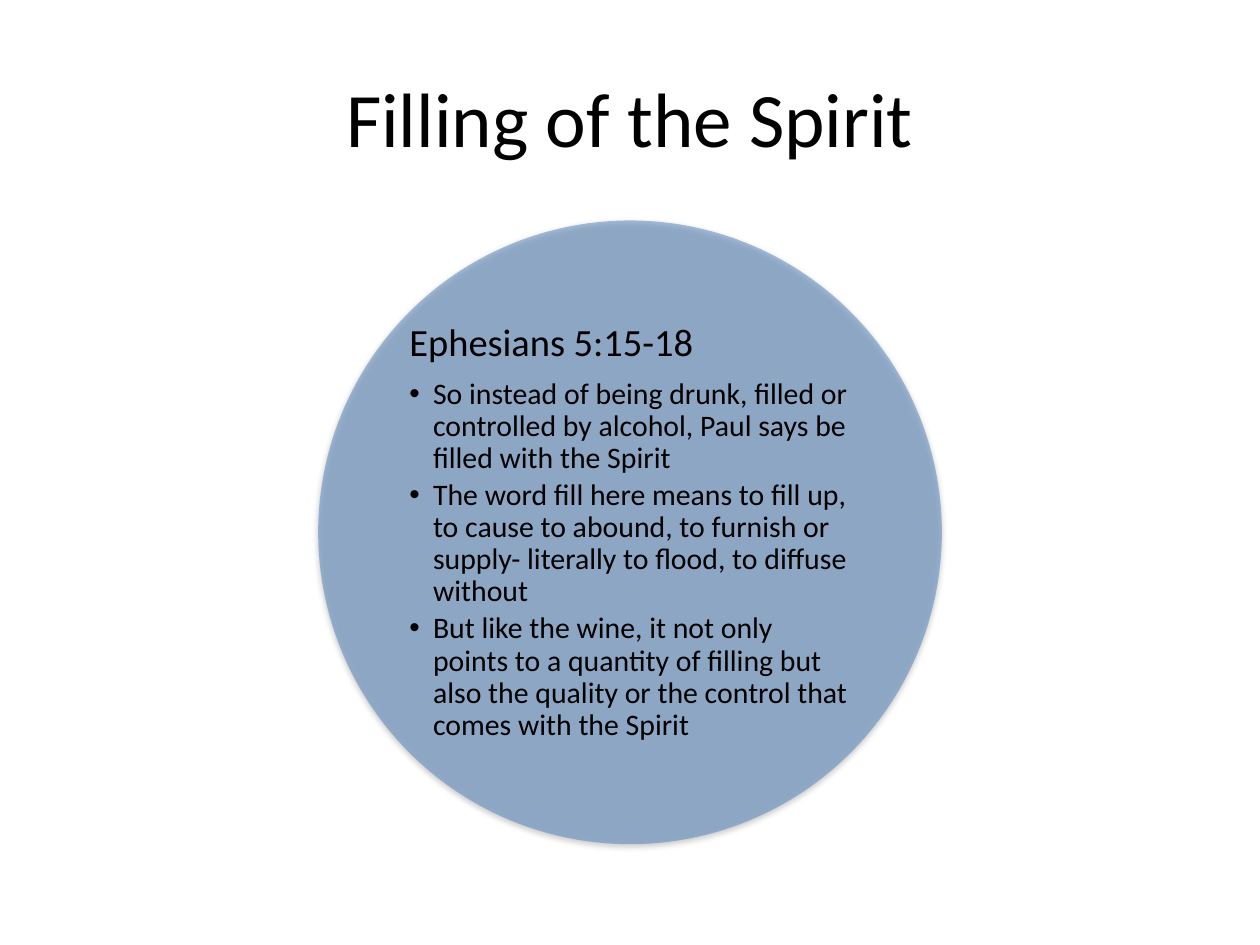
from dataclasses import dataclass

from lxml import etree
from pptx import Presentation
from pptx.dml.color import RGBColor
from pptx.enum import shapes as sh, text as tx
from pptx.oxml import ns
from pptx.util import Pt

FONT = "Calibri"
BLACK = "000000"
BLUE = "4F81BD"


@dataclass(frozen=True)
class Box:
    left: float
    top: float
    width: float
    height: float

    def inset(self, gap: float) -> "Box":
        return Box(self.left + gap, self.top + gap,
                   self.width - 2 * gap, self.height - 2 * gap)

    def lengths(self) -> tuple:
        return Pt(self.left), Pt(self.top), Pt(self.width), Pt(self.height)


@dataclass(frozen=True)
class Passage:
    text: str
    size: float
    space_after: float
    bullet: bool = False


TITLE = Box(36, 21.6, 648, 90)
CIRCLE = Box(181.8, 126, 356.4, 356.4)
PASSAGES = [Passage("Ephesians 5:15-18", 22, 8)] + [
    Passage(point, 17, 2.8, bullet=True) for point in (
        "So instead of being drunk, filled or controlled by alcohol, "
        "Paul says be filled with the Spirit",
        "The word fill here means to fill up, to cause to abound, to furnish "
        "or supply- literally to flood, to diffuse without",
        "But like the wine, it not only points to a quantity of filling but "
        "also the quality or the control that comes with the Spirit",
    )
]


def colour(hex_code: str) -> RGBColor:
    return RGBColor.from_string(hex_code)


def add_xml(parent, tag: str, **attributes):
    return etree.SubElement(parent, ns.qn(tag),
                            {name: str(value) for name, value in attributes.items()})


def add_run(paragraph, words: str, size: float) -> None:
    run = paragraph.add_run()
    run.text = words
    run.font.name = FONT
    run.font.size = Pt(size)
    run.font.color.rgb = colour(BLACK)


def add_title(slide, words: str, box: Box) -> None:
    title = slide.shapes.title
    title.left, title.top, title.width, title.height = box.lengths()
    title.text_frame.vertical_anchor = tx.MSO_ANCHOR.MIDDLE
    heading = title.text_frame.paragraphs[0]
    heading.alignment = tx.PP_ALIGN.CENTER
    add_run(heading, words, 44)


def add_circle(slide, box: Box) -> None:
    circle = slide.shapes.add_shape(sh.MSO_SHAPE.OVAL, *box.lengths())
    circle.fill.solid()
    circle.fill.fore_color.rgb = colour(BLUE)
    circle.line.fill.background()
    circle.shadow.inherit = False
    properties = circle.fill._xPr
    # Half-transparent fill
    add_xml(properties.find(".//" + ns.qn("a:srgbClr")), "a:alpha", val=50000)
    # Soft shadow below
    shadow = add_xml(properties.find(ns.qn("a:effectLst")), "a:outerShdw",
                     blurRad=Pt(3.1), dist=Pt(1.6), dir=90 * 60000, rotWithShape=0)
    shade = add_xml(shadow, "a:srgbClr", val=BLACK)
    add_xml(shade, "a:alpha", val=38000)


def add_passages(slide, passages: list[Passage], box: Box) -> None:
    frame = slide.shapes.add_textbox(*box.lengths()).text_frame
    frame.word_wrap = True
    frame.vertical_anchor = tx.MSO_ANCHOR.MIDDLE
    frame.margin_left = frame.margin_right = Pt(0)
    frame.margin_top = frame.margin_bottom = Pt(0)
    for index, passage in enumerate(passages):
        paragraph = frame.add_paragraph() if index else frame.paragraphs[0]
        paragraph.alignment = tx.PP_ALIGN.LEFT
        paragraph.line_spacing = 0.9
        paragraph.space_before = Pt(0)
        paragraph.space_after = Pt(passage.space_after)
        if passage.bullet:
            paragraph.level = 1
            properties = paragraph._p.get_or_add_pPr()
            properties.set("marL", str(Pt(13.5)))
            properties.set("indent", str(Pt(-13.5)))
            add_xml(properties, "a:buFont", typeface="Arial")
            add_xml(properties, "a:buChar", char="•")
        add_run(paragraph, passage.text, passage.size)


def main() -> None:
    deck = Presentation()
    deck.slide_width, deck.slide_height = Pt(720), Pt(540)
    slide = deck.slides.add_slide(deck.slide_layouts[5])
    add_title(slide, "Filling of the Spirit", TITLE)
    # Circle with the passage inside
    add_circle(slide, CIRCLE)
    add_passages(slide, PASSAGES, CIRCLE.inset(52.2))
    deck.save("out.pptx")


if __name__ == "__main__":
    main()
